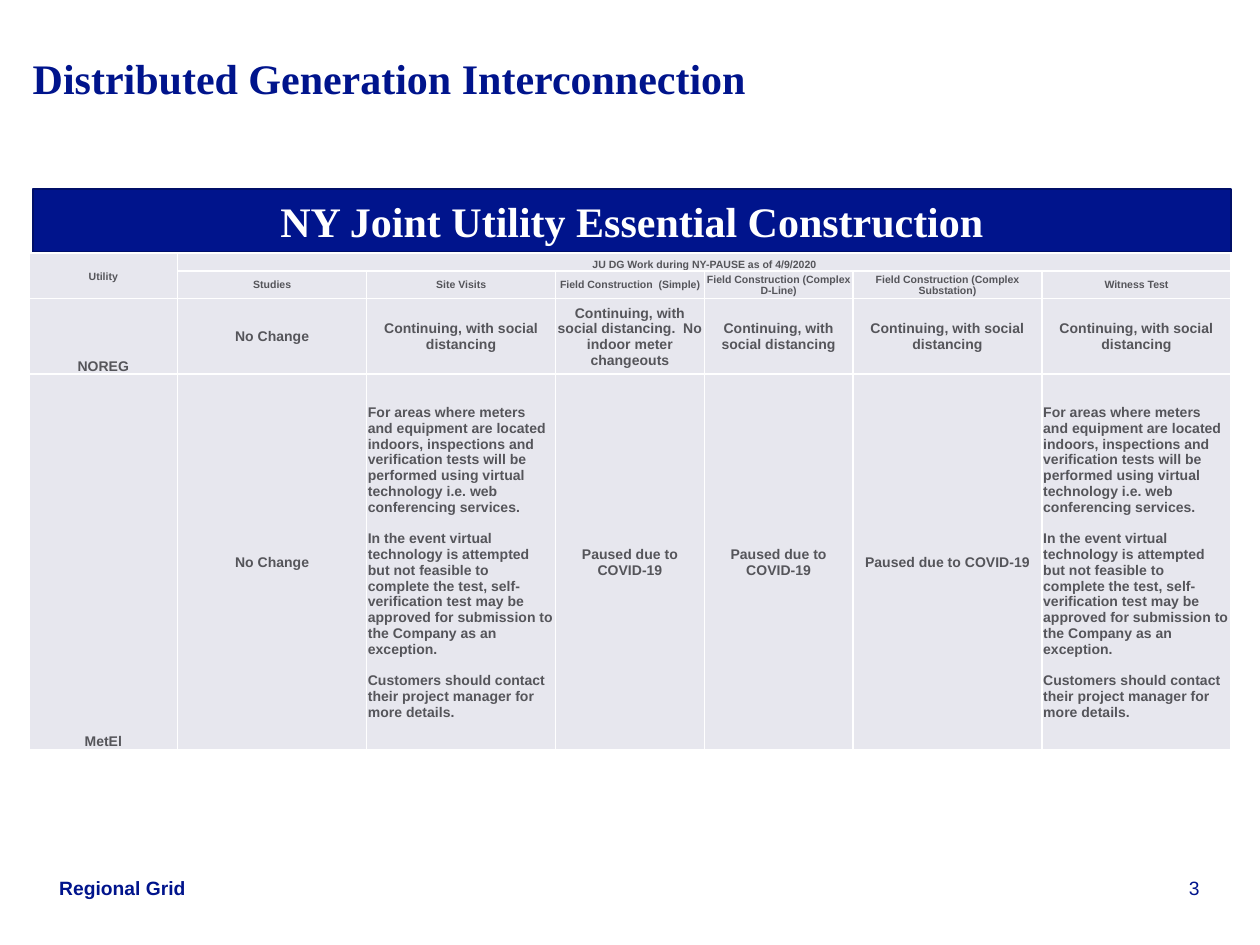
from pptx import Presentation
from pptx.dml.color import RGBColor
from pptx.enum.shapes import MSO_SHAPE
from pptx.enum.text import MSO_ANCHOR, PP_ALIGN
from pptx.oxml import parse_xml
from pptx.oxml.ns import nsdecls
from pptx.util import Inches, Pt

LEFT, CENTER, RIGHT = PP_ALIGN.LEFT, PP_ALIGN.CENTER, PP_ALIGN.RIGHT
TOP, MIDDLE, BOTTOM = MSO_ANCHOR.TOP, MSO_ANCHOR.MIDDLE, MSO_ANCHOR.BOTTOM
NAVY, DARK_NAVY, WHITE, GREY, PALE = "00148C", "000F68", "FFFFFF", "55555A", "E7E7EE"
SANS, SERIF = "Arial", "Times New Roman"

TITLE = "Distributed Generation Interconnection"
BANNER = "NY Joint Utility Essential Construction"
FOOTER, PAGE = "Regional Grid", "3"

DISTANCING = "Continuing, with social distancing"
PAUSED = "Paused due to COVID-19"
VIRTUAL = [
    "For areas where meters and equipment are located indoors, inspections and "
    "verification tests will be performed using virtual technology i.e. web "
    "conferencing services.",
    "In the event virtual technology is attempted but not feasible to complete the "
    "test, self-verification test may be approved for submission to the Company as "
    "an exception.",
    "Customers should contact their project manager for more details.",
]
ROWS = [
    ["Utility", "JU DG Work during NY-PAUSE as of 4/9/2020"] + [None] * 5,
    [None, "Studies", "Site Visits", "Field Construction  (Simple)",
     "Field Construction (Complex D-Line)", "Field Construction (Complex Substation)",
     "Witness Test"],
    ["NOREG", "No Change", DISTANCING,
     DISTANCING + ".  No indoor meter changeouts", DISTANCING, DISTANCING, DISTANCING],
    ["MetEl", "No Change", VIRTUAL, PAUSED, PAUSED, PAUSED, VIRTUAL],
]
COL_WIDTHS = [1.18, 1.5, 1.5, 1.18, 1.18, 1.5, 1.5]
ROW_HEIGHTS = [0.14, 0.22, 0.6, 2.98]
HEADER_ROWS = 2
MARGIN, CONTENT_W = 0.26, 9.51


def rgb(value):
    return RGBColor.from_string(value)


def write(tf, text, size=11, font=SANS, color=NAVY, bold=True, align=LEFT, gap=0):
    paragraphs = text if isinstance(text, list) else [text]
    for i, line in enumerate(paragraphs):
        p = tf.add_paragraph() if i else tf.paragraphs[0]
        p.alignment = align
        if i:
            p.space_before = Pt(gap)
        r = p.add_run()
        r.text = line
        r.font.size, r.font.name, r.font.bold = Pt(size), font, bold
        r.font.color.rgb = rgb(color)


def add_text(s, text, box, anchor=TOP, **fmt):
    tf = s.shapes.add_textbox(*map(Inches, box)).text_frame
    tf.word_wrap = True
    tf.vertical_anchor = anchor
    tf.margin_left = tf.margin_right = tf.margin_top = tf.margin_bottom = 0
    write(tf, text, **fmt)


def style_cell(cell):
    tcPr = cell._tc.get_or_add_tcPr()
    for side in "LRTB":
        tcPr.append(parse_xml(
            f'<a:ln{side} {nsdecls("a")} w="12700"><a:solidFill>'
            f'<a:srgbClr val="{WHITE}"/></a:solidFill></a:ln{side}>'))
    cell.fill.solid()
    cell.fill.fore_color.rgb = rgb(PALE)
    cell.margin_left = cell.margin_right = cell.margin_top = Inches(0.01)
    cell.margin_bottom = 0


def add_table(s, left, top):
    box = (left, top, sum(COL_WIDTHS), sum(ROW_HEIGHTS))
    table = s.shapes.add_table(len(ROWS), len(COL_WIDTHS), *map(Inches, box)).table
    for column, width in zip(table.columns, COL_WIDTHS):
        column.width = Inches(width)
    for row, height in zip(table.rows, ROW_HEIGHTS):
        row.height = Inches(height)
    table.cell(0, 0).merge(table.cell(1, 0))
    table.cell(0, 1).merge(table.cell(0, len(COL_WIDTHS) - 1))
    for i, row in enumerate(ROWS):
        for j, text in enumerate(row):
            cell = table.cell(i, j)
            style_cell(cell)
            if text is None:
                continue
            is_header = i < HEADER_ROWS
            at_bottom = (i, j) == (0, 1) or (not is_header and j == 0)
            cell.vertical_anchor = BOTTOM if at_bottom else MIDDLE
            write(cell.text_frame, text, size=6 if is_header else 8, color=GREY,
                  align=LEFT if text is VIRTUAL else CENTER, gap=9)


def add_banner(s, box):
    sp = s.shapes.add_shape(MSO_SHAPE.RECTANGLE, *map(Inches, box))
    sp.shadow.inherit = False
    sp.fill.solid()
    sp.fill.fore_color.rgb = rgb(NAVY)
    sp.line.color.rgb = rgb(DARK_NAVY)
    sp.line.width = Pt(1)
    sp.text_frame.word_wrap = True
    write(sp.text_frame, BANNER, size=24, font=SERIF, color=WHITE, align=CENTER)


def main():
    prs = Presentation()
    prs.slide_width, prs.slide_height = Inches(10), Inches(7.5)
    s = prs.slides.add_slide(prs.slide_layouts[6])
    add_text(s, PAGE, (8.94, 6.95, 0.58, 0.19), anchor=BOTTOM, bold=False, align=RIGHT)
    add_text(s, FOOTER, (0.47, 6.95, 1.1, 0.19), anchor=BOTTOM)
    add_text(s, TITLE, (MARGIN, 0.42, CONTENT_W, 1.08), size=24, font=SERIF)
    add_banner(s, (MARGIN, 1.5, CONTENT_W, 0.5))
    add_table(s, 0.23, 2.01)
    prs.save("out.pptx")


if __name__ == "__main__":
    main()
